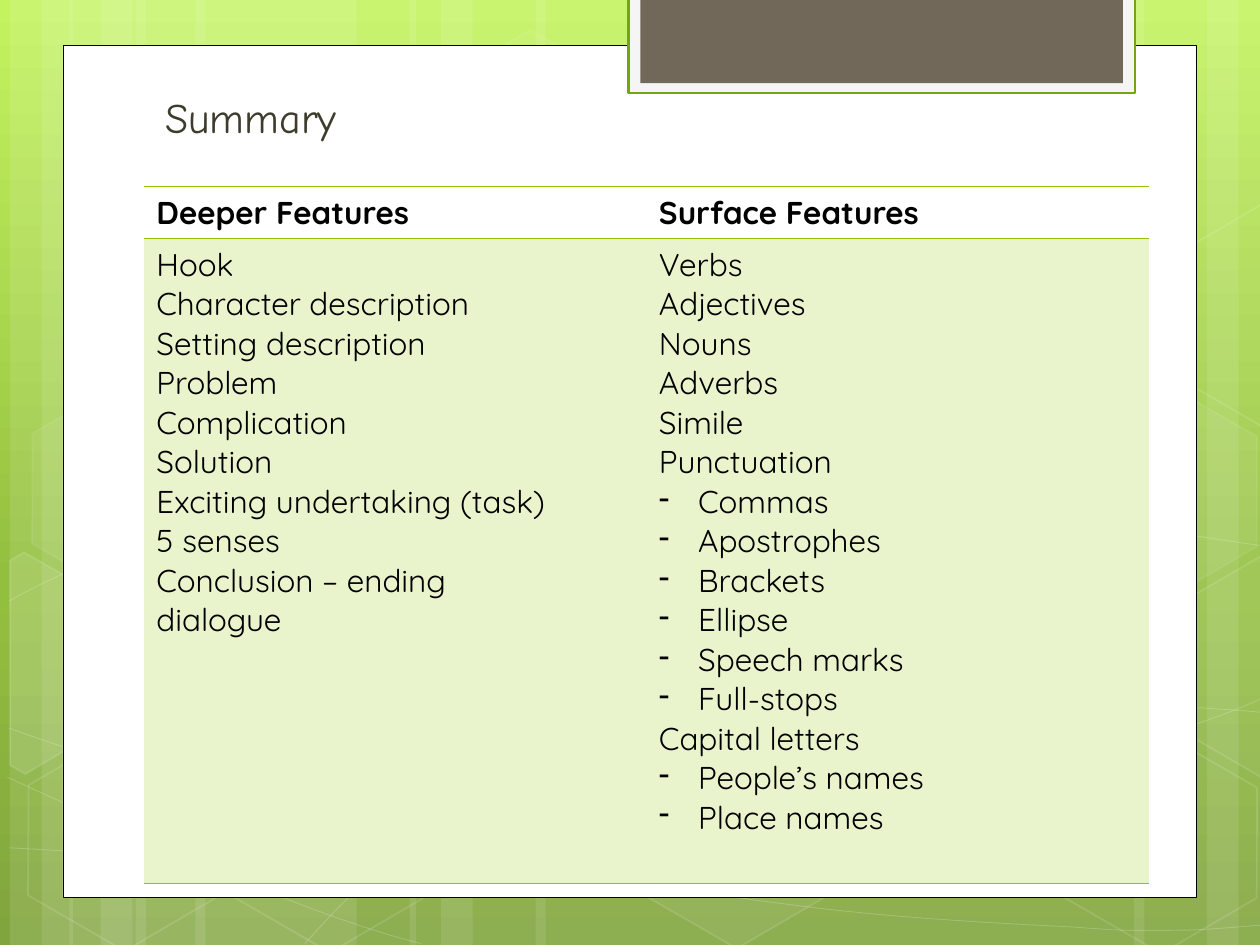
"""Build the Summary slide: a two-column feature table on a green patterned background."""
from copy import deepcopy
from math import cos, radians, sin

from lxml.etree import SubElement
from pptx import Presentation
from pptx.dml.color import RGBColor
from pptx.enum.shapes import MSO_SHAPE as SHAPE
from pptx.enum.text import MSO_ANCHOR as ANCHOR, MSO_AUTO_SIZE as AUTO_SIZE, PP_ALIGN as ALIGN
from pptx.oxml import parse_xml
from pptx.oxml.ns import nsdecls, qn
from pptx.util import Cm, Pt

COLORS = {
    "white": "FFFFFF", "black": "000000", "tab": "F5F5F5", "tab_edge": "74A510",
    "brown": "71685A", "title": "3E3D2D", "lime": "94C600",
    "top": "C3F35F", "middle": "93BF3F", "bottom": "81A53E",
}


def set_fill(fill, color, opacity=100):
    if not opacity:
        fill.background()
        return
    fill.solid()
    fill.fore_color.rgb = RGBColor.from_string(COLORS[color])
    if opacity < 100:
        color_element = fill._xPr.find(qn("a:solidFill"))[0]
        SubElement(color_element, qn("a:alpha"), val=str(opacity * 1000))


def style(shape, color, opacity, line_color="white", line_width=1, line_opacity=0):
    shape.shadow.inherit = False
    set_fill(shape.fill, color, opacity)
    set_fill(shape.line.fill, line_color, line_opacity)
    if line_opacity:
        shape.line.width = Pt(line_width)


presentation = Presentation()
presentation.slide_width, presentation.slide_height = Cm(25.4), Cm(19.05)
slide = presentation.slides.add_slide(presentation.slide_layouts[5])
shapes = slide.shapes

background = slide.background.fill
background.gradient()
background.gradient_angle = 270
stop_list = background._xPr.find(qn("a:gradFill")).find(qn("a:gsLst"))
stop_list.insert(1, deepcopy(stop_list[0]))
for stop, (position, color) in zip(
        background.gradient_stops, [(0, "top"), (0.62, "middle"), (1, "bottom")]):
    stop.position = position
    stop.color.rgb = RGBColor.from_string(COLORS[color])

STRIPES = [
    (2.74, 4.45, 0), (0.2, 1.27, 0), (0.84, 2.11, 0),
    (3.94, 4.45, 0), (1.4, 1.27, 0), (2.03, 2.11, 0),
    (18.62, 4.45, 180), (24.33, 1.27, 180), (22.86, 2.11, 180),
    (10.8, 7.82, 0), (8.26, 1.27, 0), (8.89, 2.11, 0),
]
for left, width, rotation in STRIPES:
    stripe = shapes.add_shape(SHAPE.RECTANGLE, Cm(left), 0, Cm(width), Cm(19.05))
    stripe.rotation = rotation
    style(stripe, "white", 10)

CURVES = [
    [(0.18, 17.09), (1.55, 17.17), (2.92, 17.25), (4.83, 17.22), (6.73, 17.2), (9.09, 17.15),
     (11.63, 16.89), (14.17, 16.64), (17.78, 16.15), (20.12, 15.67), (22.43, 15.19),
     (24.82, 14.43), (25.58, 14)],
    [(0.18, 12.12), (0.91, 11.71), (1.65, 11.35), (3.07, 10.95), (4.52, 10.57), (6.58, 10.01),
     (8.81, 9.83), (11.07, 9.65), (13.82, 9.63), (16.61, 9.83), (19.41, 10.03),
     (24.05, 10.82), (25.58, 11.02)],
    [(0.15, 15.67), (3.23, 17.07), (6.27, 18.47), (8.48, 19.02)],
    [(0.18, 14.68), (0.97, 14.96), (1.78, 15.24), (3.25, 15.65), (4.72, 16.03), (6.93, 16.66),
     (9.07, 17.09), (11.18, 17.53), (13.84, 17.98), (15.95, 18.24), (18.06, 18.52),
     (20.32, 18.62), (21.67, 18.69), (22.99, 18.8), (23.34, 18.75), (24, 18.75),
     (24.66, 18.72), (25.12, 18.67), (25.58, 18.64)],
    [(6.15, 19.02), (6.6, 18.52), (7.06, 18.01), (7.67, 17.55), (8.28, 17.09), (9.14, 16.59),
     (9.86, 16.23), (10.57, 15.88), (11, 15.72), (11.94, 15.47), (12.85, 15.22),
     (14.55, 14.86), (15.44, 14.68), (16.36, 14.5), (16.48, 14.5), (17.27, 14.45),
     (18.06, 14.38), (19.3, 14.3), (20.17, 14.27), (21.06, 14.25), (22.5, 14.27),
     (22.5, 14.27), (23, 14.27), (23.7, 14.27), (24.21, 14.27), (24.66, 14.3),
     (25.1, 14.33), (25.32, 14.35), (25.55, 14.38), (25.48, 14.35), (25.55, 14.38)],
]
for controls in CURVES:
    points = [(Cm(x), Cm(y)) for x, y in controls]
    builder = shapes.build_freeform(*points[0])
    builder.add_line_segments(points[1:], close=False)
    curve = builder.convert_to_shape()
    outline = next(curve._element.iter(qn("a:path")))
    segments = outline.findall(qn("a:lnTo"))
    for start in range(0, len(segments), 3):
        bezier = SubElement(outline, qn("a:cubicBezTo"))
        for segment in segments[start:start + 3]:
            bezier.append(segment[0])
            outline.remove(segment)
    style(curve, "white", 0, "white", 0.5, 20)

HEXAGONS = [
    (8.48, 0.91, 4, 8), (12.62, 14.96, 6, 12), (0.28, 15.01, 0, 12), (0.36, 7.92, 7, 8),
    (4.42, 15.04, 0, 12), (19.13, 11.51, 10, 12), (21.18, 15.06, 0, 12), (21.18, 7.98, 7, 8),
]
TILT = 30
for left, top, opacity, line_opacity in HEXAGONS:
    hexagon = shapes.add_shape(SHAPE.HEXAGON, Cm(left), Cm(top), Cm(4.45), Cm(3.86))
    hexagon.adjustments[0], hexagon.adjustments[1] = 0.285, 1.155
    hexagon.rotation = TILT
    style(hexagon, "white", opacity, line_opacity=line_opacity)

LEFT_EDGE = [(0.2, 11.3), (0.48, 11.13), (2.44, 12.24), (2.41, 14.48), (0.51, 15.6), (0.2, 15.42)]
RIGHT_EDGE = [(23.52, 12.32), (25.43, 11.2), (25.63, 11.33), (25.63, 15.57), (25.45, 15.67),
              (23.52, 14.55)]
cosine, sine = cos(radians(TILT)), sin(radians(TILT))
for corners, center_x, center_y, rise, opacity in [
        (LEFT_EDGE, 0.91, 13.59, 0, 10),
        (RIGHT_EDGE, 25.02, 13.21, 0, 4), (RIGHT_EDGE, 25.02, 13.21, 7.08, 0)]:
    points = [(Cm(center_x + (x - center_x) * cosine + (y - center_y) * sine),
               Cm(center_y - rise - (x - center_x) * sine + (y - center_y) * cosine))
              for x, y in corners]
    builder = shapes.build_freeform(*points[0])
    builder.add_line_segments(points[1:], close=True)
    cut_hexagon = builder.convert_to_shape()
    cut_hexagon.rotation = TILT
    style(cut_hexagon, "white", opacity, line_opacity=12)

PANELS = [
    (1.27, 0.91, 22.86, 17.19, "white", "black", 0.5, 100),
    (12.67, -0.05, 10.21, 1.93, "tab", "tab_edge", 1.25, 100),
    (12.91, -0.05, 9.73, 1.73, "brown", "brown", 0, 0),
]
for left, top, width, height, color, line_color, line_width, line_opacity in PANELS:
    panel = shapes.add_shape(SHAPE.RECTANGLE, Cm(left), Cm(top), Cm(width), Cm(height))
    style(panel, color, 100, line_color, line_width, line_opacity)

title = shapes.title
shapes._spTree.append(title._element)
title.left, title.top, title.width, title.height = Cm(2.9), Cm(1.72), Cm(18.82), Cm(1.5)
frame = title.text_frame
frame.text = "Summary"
frame.auto_size = AUTO_SIZE.NONE
frame.vertical_anchor = ANCHOR.TOP
frame.margin_left = Cm(0.43)
paragraph = frame.paragraphs[0]
paragraph.alignment = ALIGN.LEFT
paragraph.space_before = Pt(4.8)
paragraph.font.name, paragraph.font.size = "Comic Neue", Pt(24)
paragraph.font.color.rgb = RGBColor.from_string(COLORS["title"])

FEATURES = {
    "Deeper Features": [
        "Hook", "Character description", "Setting description", "Problem", "Complication",
        "Solution", "Exciting undertaking (task)", "5 senses", "Conclusion – ending", "dialogue"],
    "Surface Features": [
        "Verbs", "Adjectives", "Nouns", "Adverbs", "Simile", "Punctuation", "- Commas",
        "- Apostrophes", "- Brackets", "- Ellipse", "- Speech marks", "- Full-stops",
        "Capital letters", "- People’s names", "- Place names"],
}
table = shapes.add_table(2, 2, Cm(2.9), Cm(3.76), Cm(20.26), Cm(14.04)).table
table.first_row = table.horz_banding = False
table._tbl.tblPr.find(qn("a:tableStyleId")).text = "{2D5ABB26-0587-4C30-8999-92F81FD0307C}"
table.rows[0].height, table.rows[1].height = Cm(1.04), Cm(13)
for column, (heading, features) in enumerate(FEATURES.items()):
    table.columns[column].width = Cm(10.13)
    for row, lines in enumerate([[heading], features]):
        cell = table.cell(row, column)
        cell.text = "\n".join(line.removeprefix("- ") for line in lines)
        set_fill(cell.fill, "lime", 20 * row)
        properties = cell._tc.get_or_add_tcPr()
        for index, side in enumerate(["lnT", "lnB"]):
            properties.insert(index, parse_xml(
                f'<a:{side} {nsdecls("a")} w="{Pt(1)}"><a:solidFill>'
                f'<a:srgbClr val="{COLORS["lime"]}"/></a:solidFill></a:{side}>'))
        for line, paragraph in zip(lines, cell.text_frame.paragraphs):
            paragraph.font.name, paragraph.font.size = "Quicksand", Pt(18)
            paragraph.font.bold = row == 0
            paragraph.font.color.rgb = RGBColor.from_string(COLORS["black"])
            if line.startswith("- "):
                bullet = paragraph._p.get_or_add_pPr()
                bullet.set("marL", str(Cm(0.79)))
                bullet.set("indent", str(Cm(-0.79)))
                bullet.insert(0, parse_xml(f'<a:buFontTx {nsdecls("a")}/>'))
                bullet.insert(1, parse_xml(f'<a:buChar {nsdecls("a")} char="-"/>'))

presentation.save("out.pptx")
